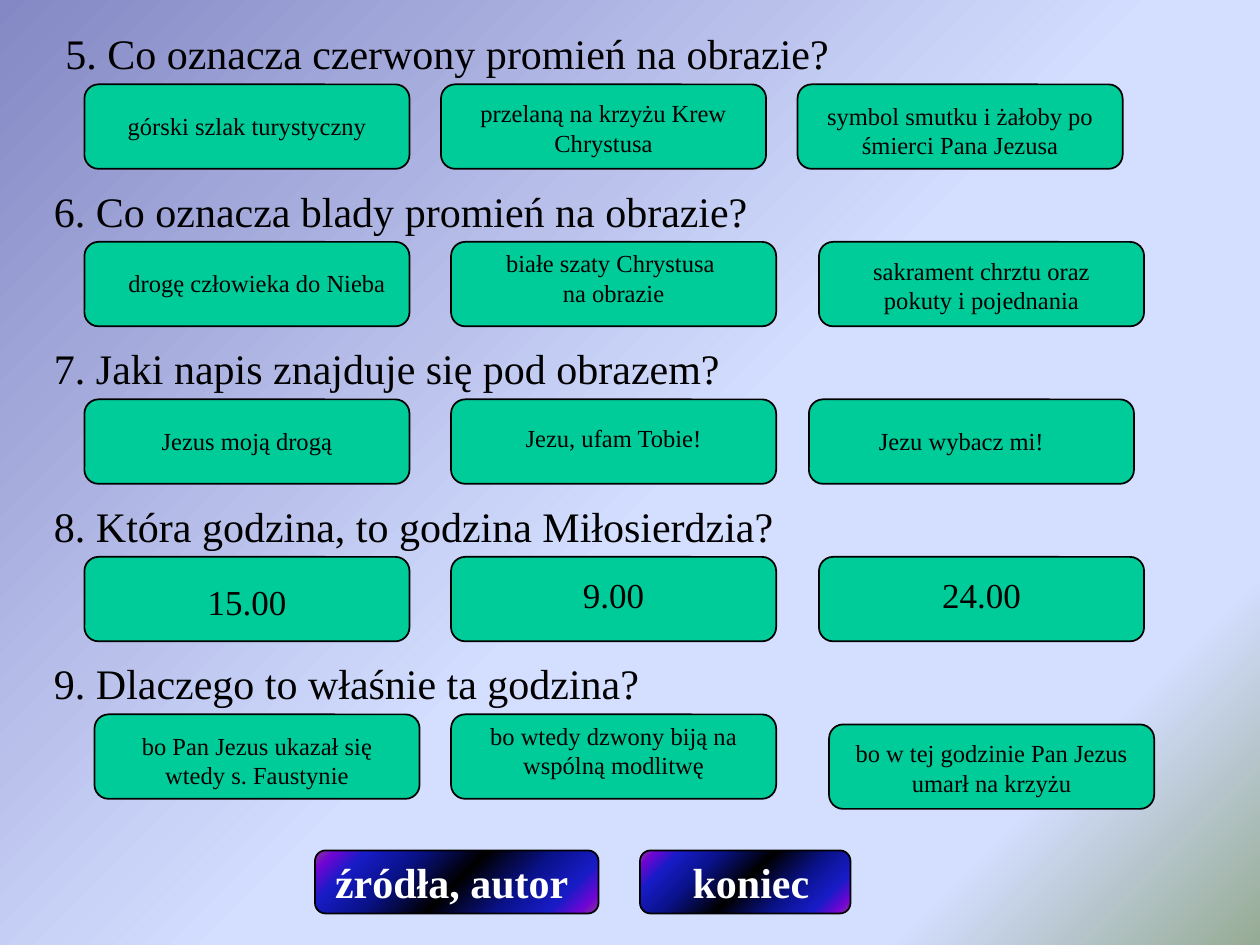
from dataclasses import dataclass

from lxml import etree
from pptx import Presentation
from pptx import util as u
from pptx.dml.color import RGBColor
from pptx.enum import shapes, text
from pptx.oxml.ns import qn

COLOURS = {"ink": "000000", "card": "00CC99", "button_text": "FFFFFF"}
BACKGROUND_STOPS = [(0, "8488C4"), (53, "D4DEFF"), (83, "D4DEFF"), (100, "96AB94")]
BUTTON_STOPS = [(0, "8C3D91"), (6, "7005D4"), (15, "181CC7"), (30, "0A128C"), (50, "000000"),
                (70, "0A128C"), (85, "181CC7"), (94, "7005D4"), (100, "8C3D91")]
FIRST_TOP, ROW_STEP, QUESTION_HEIGHT = 0.17, 1.25, 0.5
CARD_WIDTH, CARD_HEIGHT, LABEL_WIDTH = 2.58, 0.67, 2.42


@dataclass
class Answer:
    """One card; the offsets place its label, drop lowers the whole card."""
    left: float
    words: str
    label_down: float
    label_right: float = 0.08
    size: int = 14
    drop: float = 0


QUESTIONS = [
    (0.42, "5. Co oznacza czerwony promień na obrazie?", [
        Answer(0.67, "górski szlak turystyczny", 0.16),
        Answer(3.5, "przelaną na krzyżu Krew Chrystusa", 0.06),
        Answer(6.33, "symbol smutku i żałoby po śmierci Pana Jezusa", 0.08)]),
    (0.33, "6. Co oznacza blady promień na obrazie?", [
        Answer(0.67, "drogę człowieka do Nieba", 0.16, label_right=0.16),
        Answer(3.58, "białe szaty Chrystusa \vna obrazie", 0),
        Answer(6.5, "sakrament chrztu oraz pokuty i pojednania", 0.06)]),
    (0.33, "7. Jaki napis znajduje się pod obrazem?", [
        Answer(0.67, "Jezus moją drogą", 0.16),
        Answer(3.58, "Jezu, ufam Tobie!", 0.14),
        Answer(6.42, "Jezu wybacz mi!", 0.16, label_right=0)]),
    (0.33, "8. Która godzina, to godzina Miłosierdzia?", [
        Answer(0.67, "15.00", 0.14, size=20),
        Answer(3.58, "9.00", 0.08, size=20),
        Answer(6.5, "24.00", 0.08, size=20)]),
    (0.33, "9. Dlaczego to właśnie ta godzina?", [
        Answer(0.75, "bo Pan Jezus ukazał się wtedy s. Faustynie", 0.08),
        Answer(3.58, "bo wtedy dzwony biją na wspólną modlitwę", 0),
        Answer(6.58, "bo w tej godzinie Pan Jezus umarł na krzyżu", 0.06, drop=0.08)]),
]
# left, width, label left, label width, label
BUTTONS = [(2.5, 2.25, 2.5, 2.17, "źródła, autor"), (5.08, 1.67, 5.17, 1.58, "koniec")]
BUTTON_TOP, BUTTON_HEIGHT = 6.75, 0.5


def set_gradient(fill, element, stops):
    """Fill diagonally from top left; element is the XML that holds the fill."""
    fill.gradient()
    fill.gradient_angle = 315
    stop_list = next(element.iter(qn("a:gsLst")))
    for stop in list(stop_list):
        stop_list.remove(stop)
    for percent, colour in stops:
        stop = etree.SubElement(stop_list, qn("a:gs"), pos=str(percent * 1000))
        etree.SubElement(stop, qn("a:srgbClr"), val=colour)


class QuizSlide:
    font_name = "Times New Roman"

    def __init__(self, slide):
        self.slide = slide

    def background(self, stops):
        set_gradient(self.slide.background.fill, self.slide.element, stops)

    def label(self, left, top, width, height, words, size, colour="ink", centred=True, bold=False):
        box = self.slide.shapes.add_textbox(*map(u.Inches, (left, top, width, height)))
        frame = box.text_frame
        frame.word_wrap = True
        frame.auto_size = text.MSO_AUTO_SIZE.SHAPE_TO_FIT_TEXT
        paragraph = frame.paragraphs[0]
        paragraph.text = words
        paragraph.alignment = text.PP_ALIGN.CENTER if centred else text.PP_ALIGN.LEFT
        paragraph.font.name = self.font_name
        paragraph.font.size = u.Pt(size)
        paragraph.font.bold = bold
        paragraph.font.color.rgb = RGBColor.from_string(COLOURS[colour])

    def rounded_box(self, left, top, width, height):
        shape = self.slide.shapes.add_shape(
            shapes.MSO_SHAPE.ROUNDED_RECTANGLE, *map(u.Inches, (left, top, width, height)))
        shape.shadow.inherit = False
        shape.line.color.rgb = RGBColor.from_string(COLOURS["ink"])
        shape.line.width = u.Pt(1)
        return shape

    def answer(self, answer, row_top):
        top = row_top + answer.drop
        card = self.rounded_box(answer.left, top, CARD_WIDTH, CARD_HEIGHT)
        card.fill.solid()
        card.fill.fore_color.rgb = RGBColor.from_string(COLOURS["card"])
        height = 0.43 if answer.size == 20 else 0.57 if len(answer.words) > 25 else 0.33
        self.label(answer.left + answer.label_right, top + answer.label_down,
                   LABEL_WIDTH, height, answer.words, answer.size)

    def question(self, left, top, words, answers):
        self.label(left, top, 7.58, QUESTION_HEIGHT, words, 24, centred=False)
        for answer in answers:
            self.answer(answer, top + QUESTION_HEIGHT)

    def button(self, left, width, label_left, label_width, words):
        shape = self.rounded_box(left, BUTTON_TOP, width, BUTTON_HEIGHT)
        set_gradient(shape.fill, shape.element, BUTTON_STOPS)
        self.label(label_left, BUTTON_TOP, label_width, BUTTON_HEIGHT, words, 24,
                   colour="button_text", bold=True)


def main():
    presentation = Presentation()
    presentation.slide_width, presentation.slide_height = u.Inches(10), u.Inches(7.5)
    quiz = QuizSlide(presentation.slides.add_slide(presentation.slide_layouts[6]))
    quiz.background(BACKGROUND_STOPS)
    for row, (left, words, answers) in enumerate(QUESTIONS):
        quiz.question(left, FIRST_TOP + row * ROW_STEP, words, answers)
    for button in BUTTONS:
        quiz.button(*button)
    presentation.save("out.pptx")


if __name__ == "__main__":
    main()
